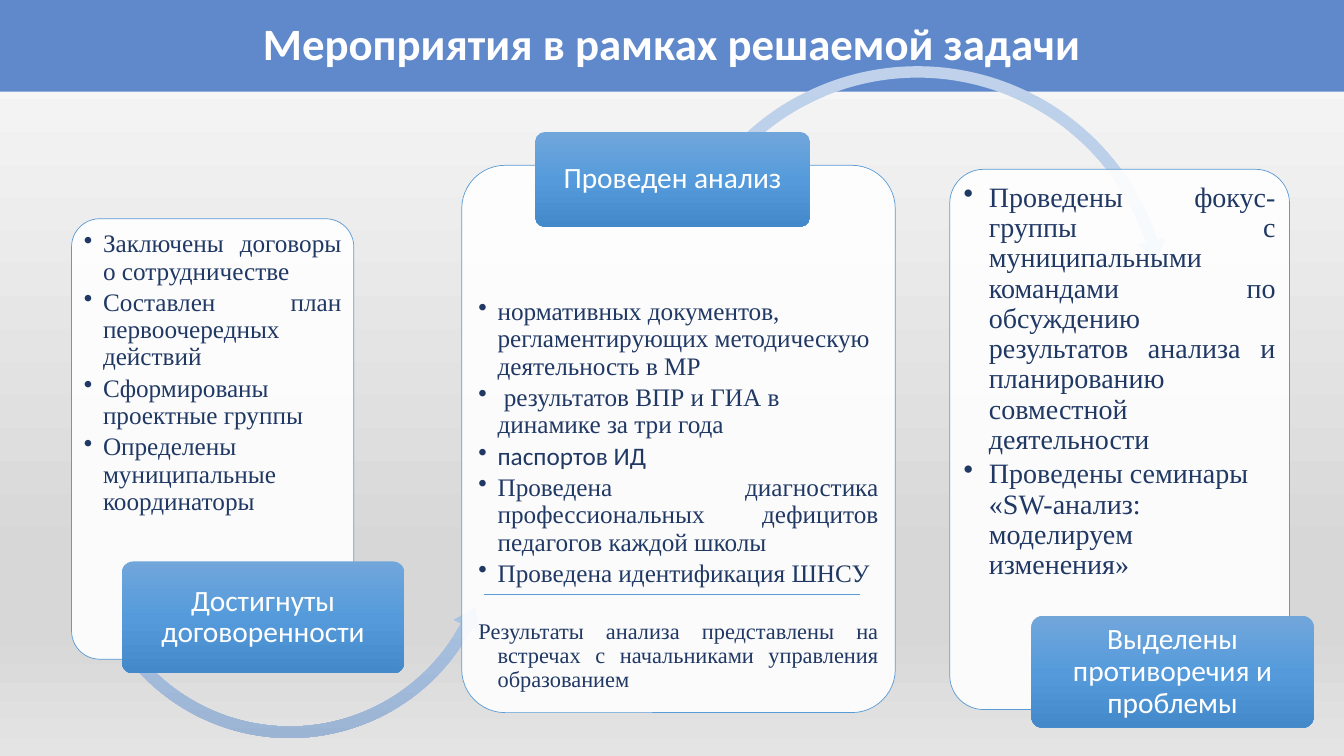
"""Build the slide on the measures taken within the task."""
import dataclasses

import pptx
import pptx.dml.color
import pptx.enum.shapes
import pptx.enum.text
import pptx.oxml.ns
import pptx.util
from lxml import etree

Inches, Pt = pptx.util.Inches, pptx.util.Pt
RGB = pptx.dml.color.RGBColor.from_string
SHAPE = pptx.enum.shapes.MSO_SHAPE
ALIGN = pptx.enum.text.PP_ALIGN
ANCHOR = pptx.enum.text.MSO_ANCHOR
qn = pptx.oxml.ns.qn


@dataclasses.dataclass(frozen=True)
class Theme:
    band: str = "6089CC"
    white: str = "FFFFFF"
    ink: str = "203864"
    outline: str = "5B9BD5"
    backdrop: tuple = ((0, "FAFAFA"), (74, "D7D7D7"), (83, "D7D7D7"), (100, "E4E4E4"))
    label: tuple = ((0, "71A6DB"), (50, "559BDB"), (100, "448ACA"))
    arrow: tuple = ((0, "C0D2EB"), (50, "B3CBE9"), (100, "9BB4D3"))
    sans: str = "Calibri"
    serif: str = "Times New Roman"
    title_size: int = 32
    label_size: int = 21
    large_size: int = 20
    body_size: int = 18
    note_size: int = 16


theme = Theme()


def shade(fill, element, stops):
    """Fill from top to bottom with the given colour stops."""
    fill.gradient()
    fill.gradient_angle = 270
    stop_list = element.find(".//" + qn("a:gsLst"))
    for old in list(stop_list):
        stop_list.remove(old)
    for position, color in stops:
        stop = etree.SubElement(stop_list, qn("a:gs"), pos=str(position * 1000))
        etree.SubElement(stop, qn("a:srgbClr"), val=color)


def style(p, name, size, color, align):
    """Set the font, alignment and line spacing of a paragraph."""
    p.font.name, p.font.size = name, Pt(size)
    p.font.color.rgb = RGB(color)
    p.alignment, p.line_spacing = align, 0.9


prs = pptx.Presentation()
prs.slide_width, prs.slide_height = Inches(13.33), Inches(7.5)
s = prs.slides.add_slide(prs.slide_layouts[5])
shade(s.background.fill, s.element, theme.backdrop)

title = s.shapes.title
title.left, title.top, title.width, title.height = map(Inches, (0, 0, 13.33, 0.91))
title.fill.solid()
title.fill.fore_color.rgb = RGB(theme.band)
title.text_frame.text = "Мероприятия в рамках решаемой задачи"
title.text_frame.vertical_anchor = ANCHOR.MIDDLE
p = title.text_frame.paragraphs[0]
style(p, theme.sans, theme.title_size, theme.white, ALIGN.CENTER)
p.font.bold = True

L, J = ALIGN.LEFT, ALIGN.JUSTIFY
stages = [
    dict(panel=(0.71, 2.17, 2.8, 4.37), top=0.04, size=theme.body_size, indent=0.19,
         items=[("Заключены договоры о сотрудничестве", J),
                ("Составлен план первоочередных действий", J),
                ("Сформированы проектные группы", J),
                ("Определены муниципальные координаторы", J)],
         arrow=(SHAPE.LEFT_CIRCULAR_ARROW, (0.76, 3.17, 4.23, 4.23),
                (0.027, 3.295, 16.563, 85.757, 0.032)),
         label=("Достигнуты договоренности", (1.21, 5.57, 2.8, 1.11))),
    dict(panel=(4.58, 1.64, 4.3, 5.43), top=1.2, size=theme.body_size, indent=0.19,
         items=[("нормативных документов, регламентирующих методическую деятельность в МР", L),
                (" результатов ВПР и ГИА в динамике за три года", L),
                ("паспортов ИД", L),
                ("Проведена диагностика профессиональных дефицитов педагогов каждой школы", J),
                ("Проведена идентификация ШНСУ", L),
                ("Результаты анализа представлены на встречах с начальниками "
                 "управления образованием", J)],
         arrow=(SHAPE.CIRCULAR_ARROW, (6.52, 0.58, 5.16, 5.16),
                (0.022, 2.673, 205.078, 135.261, 0.026)),
         label=("Проведен анализ", (5.31, 1.31, 2.72, 0.94))),
    dict(panel=(9.42, 1.68, 3.37, 5.36), top=0.04, size=theme.large_size, indent=0.25,
         items=[("Проведены фокус-группы с муниципальными командами по обсуждению "
                 "результатов анализа и планированию совместной деятельности", J),
                ("Проведены семинары «SW-анализ: моделируем изменения»", L)],
         arrow=None,
         label=("Выделены противоречия и проблемы", (10.23, 6.11, 2.8, 1.11))),
]

for stage in stages:
    sp = s.shapes.add_shape(SHAPE.ROUNDED_RECTANGLE, *map(Inches, stage["panel"]))
    sp.shadow.inherit = False
    sp.adjustments[0] = 0.1
    sp.fill.solid()
    sp.fill.fore_color.rgb = RGB(theme.white)
    color = sp.element.spPr.find(qn("a:solidFill")).find(qn("a:srgbClr"))
    etree.SubElement(color, qn("a:alpha"), val="90000")
    sp.line.color.rgb, sp.line.width = RGB(theme.outline), Pt(0.5)
    tf = sp.text_frame
    tf.word_wrap, tf.vertical_anchor = True, ANCHOR.TOP
    tf.margin_left = tf.margin_right = tf.margin_bottom = Inches(0.04)
    tf.margin_top = Inches(stage["top"])
    tf.text = "\n".join(text for text, align in stage["items"])
    for p, (text, align) in zip(tf.paragraphs, stage["items"]):
        is_note = text.startswith("Результаты")
        name = theme.sans if text == "паспортов ИД" else theme.serif
        style(p, name, theme.note_size if is_note else stage["size"], theme.ink, align)
        p.level = 1
        p.space_before, p.space_after = Pt(20 if is_note else 0), Pt(3)
        pPr = p._p.get_or_add_pPr()
        pPr.set("marL", str(Inches(stage["indent"])))
        pPr.set("indent", str(-Inches(stage["indent"])))
        if not is_note:
            bullet = etree.Element(qn("a:buChar"), char="•")
            pPr.find(qn("a:defRPr")).addprevious(bullet)

    if stage["arrow"]:
        kind, box, adjustments = stage["arrow"]
        sp = s.shapes.add_shape(kind, *map(Inches, box))
        sp.shadow.inherit = False
        for i, value in enumerate(adjustments):
            sp.adjustments[i] = value
        shade(sp.fill, sp.element, theme.arrow)
        sp.line.fill.background()

    text, box = stage["label"]
    sp = s.shapes.add_shape(SHAPE.ROUNDED_RECTANGLE, *map(Inches, box))
    sp.shadow.inherit = False
    sp.adjustments[0] = 0.1
    shade(sp.fill, sp.element, theme.label)
    sp.line.fill.background()
    tf = sp.text_frame
    tf.word_wrap, tf.vertical_anchor = True, ANCHOR.MIDDLE
    tf.margin_left = tf.margin_right = Inches(0.04)
    tf.margin_top = tf.margin_bottom = Inches(0.03)
    tf.text = text
    style(tf.paragraphs[0], theme.sans, theme.label_size, theme.white, ALIGN.CENTER)

divider = s.shapes.add_connector(pptx.enum.shapes.MSO_CONNECTOR.STRAIGHT,
                                 Inches(4.8), Inches(5.9), Inches(8.53), Inches(5.9))
divider.line.color.rgb, divider.line.width = RGB(theme.outline), Pt(0.5)
etree.SubElement(divider.element.spPr, qn("a:effectLst"))

prs.save("out.pptx")
